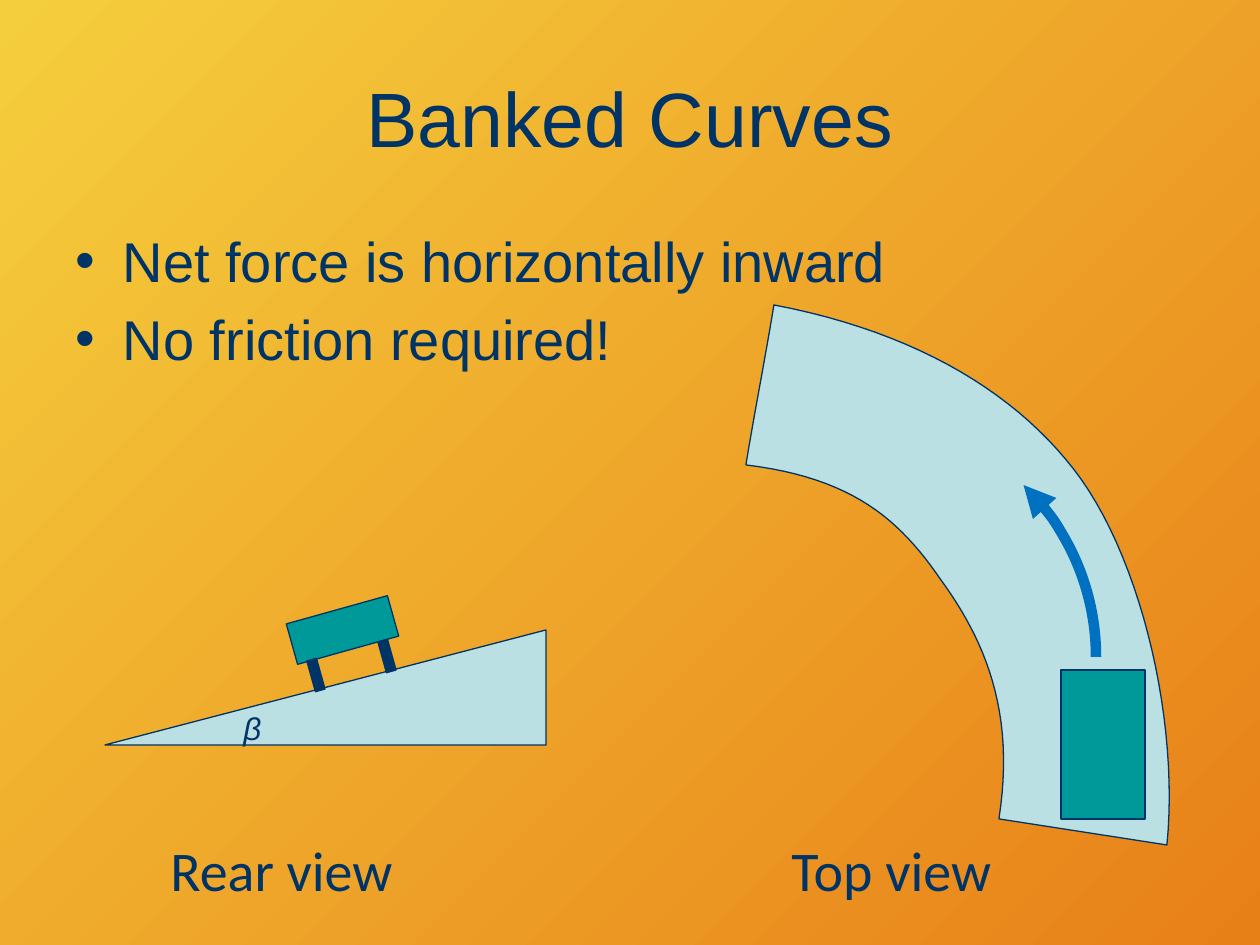
"""Build the Banked Curves slide with a rear view and a top view of a car."""
import pptx
import pptx.dml.color
import pptx.enum.dml
import pptx.enum.shapes
import pptx.enum.text
import pptx.oxml
import pptx.oxml.ns
import pptx.util

PX = pptx.util.Inches(10) / 1260
COLORS = {"navy": "003366", "road": "BBE0E3", "car": "009999", "arrow": "0070C0",
          "bg_start": "F5CE3D", "bg_end": "E88018"}
TITLE = ("Banked Curves", (63, 38, 1134, 157))
BULLETS = (["Net force is horizontally inward", "No friction required!"], (63, 220, 1134, 168))
SLOPE = (105, 630, 441, 115)
ANGLE = ("β", (231, 703, 43, 50))
TILT = -15.6
TILTED_PARTS = [("car", (290, 609, 105, 42)),
                ("navy", (311, 659, 10, 32)),
                ("navy", (382, 640, 10, 32))]
LABELS = [("Rear view", (158, 829, 334, 81)), ("Top view", (779, 829, 305, 81))]
TOP_CAR = (1061, 670, 84, 149)
ARROW = (621, 418, 475, 478)
ARROW_START = 188.3
ROAD_START = (999, 819)
ROAD_CURVES = [((1016, 711), (984, 639), (941, 580)),
               ((900, 520), (853, 478), (746, 465)),
               ((755, 410), (765, 360), (774, 305)),
               ((921, 333), (1022, 397), (1081, 479)),
               ((1144, 568), (1179, 726), (1167, 845))]
STEPS = 24
SHAPE = pptx.enum.shapes.MSO_SHAPE


def rgb(name):
    return pptx.dml.color.RGBColor.from_string(COLORS[name])


def emu(values):
    return [round(v * PX) for v in values]


def place(sp, box):
    sp.left, sp.top, sp.width, sp.height = emu(box)


def style_text(tf, size, font, italic=None):
    for p in tf.paragraphs:
        for r in p.runs:
            r.font.size = pptx.util.Pt(size)
            r.font.name = font
            r.font.italic = italic
            r.font.color.rgb = rgb("navy")


def style_shape(sp, fill, line="navy", width=0.75):
    sp.shadow.inherit = False
    if fill:
        sp.fill.solid()
        sp.fill.fore_color.rgb = rgb(fill)
    else:
        sp.fill.background()
    sp.line.color.rgb = rgb(line)
    sp.line.width = pptx.util.Pt(width)


def add_shape(shapes, kind, box, fill):
    sp = shapes.add_shape(kind, *emu(box))
    style_shape(sp, fill)
    return sp


def add_label(shapes, text, box, size, font, italic=None):
    tf = shapes.add_textbox(*emu(box)).text_frame
    tf.word_wrap = False
    tf.auto_size = pptx.enum.text.MSO_AUTO_SIZE.SHAPE_TO_FIT_TEXT
    tf.text = text
    style_text(tf, size, font, italic)


def curve_points(start, curves):
    points = []
    for c1, c2, end in curves:
        for i in range(1, STEPS + 1):
            t = i / STEPS
            u = 1 - t
            points.append(emu(u**3 * a + 3 * u * u * t * b + 3 * u * t * t * c + t**3 * d
                              for a, b, c, d in zip(start, c1, c2, end)))
        start = end
    return points


def set_background(s):
    fill = s.background.fill
    fill.gradient()
    fill.gradient_angle = 315
    for stop, name in zip(fill.gradient_stops, ("bg_start", "bg_end")):
        stop.color.rgb = rgb(name)


def add_heading(s):
    text, box = TITLE
    title = s.shapes.title
    place(title, box)
    title.text_frame.text = text
    style_text(title.text_frame, 44, "Arial")
    lines, box = BULLETS
    body = s.placeholders[1]
    place(body, box)
    body.text_frame.text = "\n".join(lines)
    style_text(body.text_frame, 32, "Arial")


def add_rear_view(s):
    shapes = s.shapes.add_group_shape().shapes
    slope = add_shape(shapes, SHAPE.RIGHT_TRIANGLE, SLOPE, "road")
    slope._element.spPr.find(pptx.oxml.ns.qn("a:xfrm")).set("flipH", "1")
    add_label(shapes, *ANGLE, 18, "Arial", True)
    for fill, box in TILTED_PARTS:
        add_shape(shapes, SHAPE.RECTANGLE, box, fill).rotation = TILT


def add_road(s):
    builder = s.shapes.build_freeform(*emu(ROAD_START))
    builder.add_line_segments(curve_points(ROAD_START, ROAD_CURVES), close=True)
    style_shape(builder.convert_to_shape(), "road")


def add_arrow(s):
    arc = s.shapes.add_shape(SHAPE.ARC, *emu(ARROW))
    arc.adjustments[0] = ARROW_START
    arc.adjustments[1] = 0
    style_shape(arc, None, "arrow", 6)
    head = pptx.oxml.parse_xml(f'<a:headEnd {pptx.oxml.ns.nsdecls("a")} type="triangle"/>')
    arc.line._get_or_add_ln().append(head)


def main():
    prs = pptx.Presentation()
    prs.slide_width, prs.slide_height = emu((1260, 945))
    s = prs.slides.add_slide(prs.slide_layouts[1])
    set_background(s)
    add_heading(s)
    add_rear_view(s)
    add_road(s)
    for text, box in LABELS:
        add_label(s.shapes, text, box, 32, "Calibri")
    add_shape(s.shapes, SHAPE.RECTANGLE, TOP_CAR, "car")
    add_arrow(s)
    prs.save("out.pptx")


if __name__ == "__main__":
    main()
